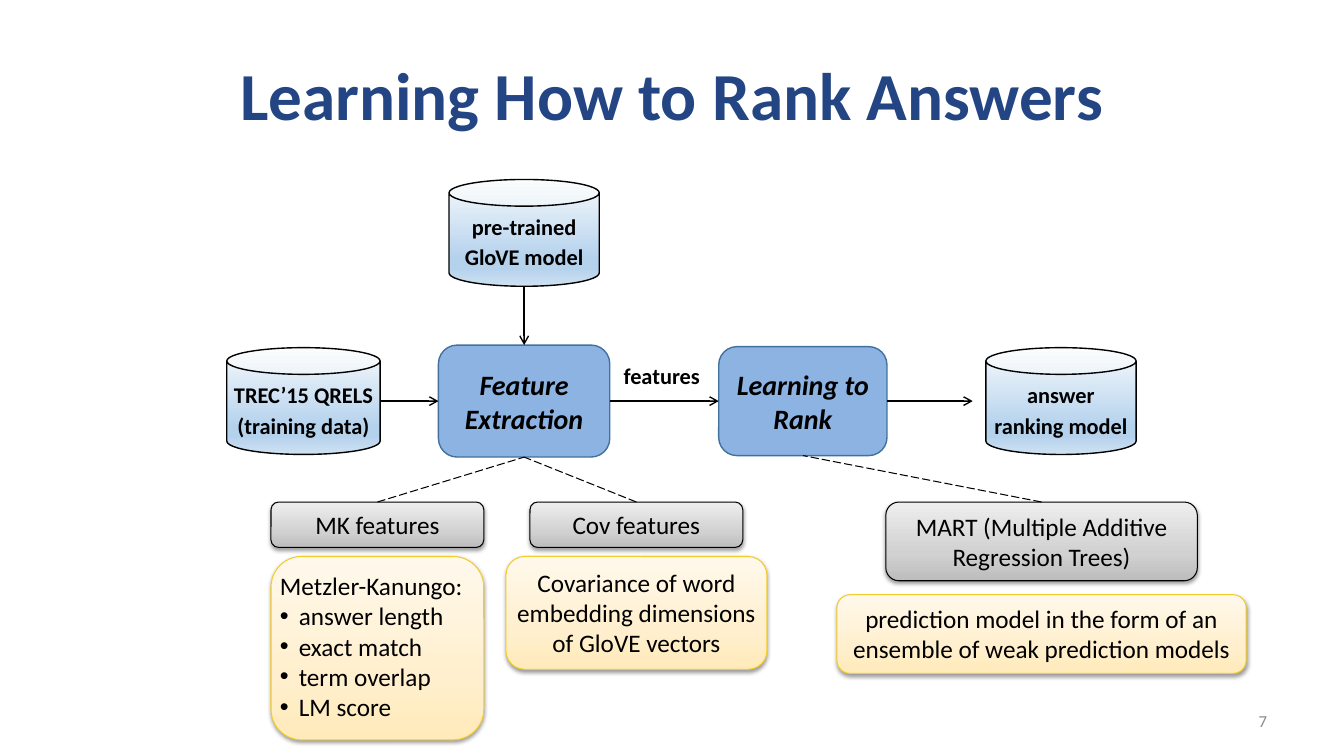
from lxml import etree
from pptx import Presentation
from pptx.dml.color import RGBColor
from pptx.enum.dml import MSO_LINE
from pptx.enum.shapes import MSO_CONNECTOR, MSO_SHAPE
from pptx.enum.text import MSO_ANCHOR as Anchor, MSO_AUTO_SIZE as AutoSize, PP_ALIGN as Align
from pptx.oxml.ns import qn
from pptx.util import Pt

# Content: the pipeline row holds (kind, left, width, height, text)
TITLE = "Learning How to Rank Answers"
PAGE = "7"
PIPELINE = {
    "training": ("store", 162, 109.5, 76.3, "TREC’15 QRELS (training data)"),
    "extraction": ("process", 313.2, 122.4, 80, "Feature Extraction"),
    "ranking": ("process", 513.4, 120.2, 77.8, "Learning to Rank"),
    "answer": ("store", 704.2, 107.3, 76.3, "answer\vranking model"),
}
GLOVE = ("pre-trained GloVE model", 128.2, 107.3, 76.3)  # text, top, width, height
LINK_LABEL = "features"
# process, header, centre, (width, height), note lines, note top, (width, height)
DETAILS = [
    ("extraction", "MK features", 269.6, (152, 32.4),
     ["Metzler-Kanungo:", "answer length", "exact match", "term overlap", "LM score"],
     397.5, (152, 131)),
    ("extraction", "Cov features", 454.6, (152, 32.4),
     ["Covariance of word embedding dimensions of GloVE vectors"], 397.5, (186.5, 80.6)),
    ("ranking", "MART (Multiple Additive Regression Trees)", 744, (222.5, 56.2),
     ["prediction model in the form of an ensemble of weak prediction models"],
     424.8, (292.3, 56.2)),
]
ROW_MIDDLE = 286.5
HEADER_TOP = 358.6
ARROW_END = 694.8
BULLET_INDENT = 13.5

# Theme: gradients are (angle, [(position, colour), ...])
THEME = {
    "font": "Calibri",
    "black": "000000",
    "store": {"fill": (90, [(0, "F7FAFD"), (74, "B5D2EC"), (83, "B5D2EC"), (100, "CEE1F2")]),
              "line": "000000", "width": 1},
    "process": {"fill": "8DB3E2", "line": "41719C", "width": 1},
    "header": {"fill": (270, [(0, "BDBDBD"), (35, "D1D1D1"), (100, "EEEEEE")]),
               "line": "000000", "width": 0.75, "shadow": True},
    "note": {"fill": (270, [(0, "FFEAB9"), (35, "FFEFCE"), (100, "FFF9EC")]),
             "line": "F4CB27", "width": 0.75, "shadow": True},
}
TEXT = {
    "title": {"size": 48, "bold": True, "color": "244583"},
    "store": {"size": 16, "bold": True, "inset": 0, "spacing": 1.15, "after": 10},
    "process": {"size": 20, "bold": True, "italic": True},
    "header": {"size": 18, "anchor": Anchor.TOP, "grow": True},
    "note": {"size": 18, "anchor": Anchor.TOP, "grow": True, "inset": 0},
    "page": {"size": 12, "color": "8C8C8C", "align": Align.RIGHT},
}

presentation = Presentation()
presentation.slide_width, presentation.slide_height = Pt(960), Pt(540)
slide = presentation.slides.add_slide(presentation.slide_layouts[6])


def set_all(target, values):
    for name, value in values.items():
        setattr(target, name, value)


def add_xml(parent, tag, **attributes):
    return etree.SubElement(parent, qn(tag), {key: str(value) for key, value in attributes.items()})


def write(shape, lines, style_name):
    """Fill a shape with paragraphs; lines after the first are bullets."""
    style = TEXT[style_name]
    inset = Pt(style.get("inset", 7.2))
    frame = shape.text_frame
    set_all(frame, {
        "word_wrap": True,
        "auto_size": AutoSize.SHAPE_TO_FIT_TEXT if style.get("grow") else AutoSize.NONE,
        "vertical_anchor": style.get("anchor", Anchor.MIDDLE),
        "margin_left": inset, "margin_right": inset,
        "margin_top": Pt(3.6), "margin_bottom": Pt(3.6),
    })
    align = Align.LEFT if len(lines) > 1 else style.get("align", Align.CENTER)
    for index, line in enumerate(lines):
        paragraph = frame.add_paragraph() if index else frame.paragraphs[0]
        paragraph.text = line
        set_all(paragraph, {"alignment": align, "line_spacing": style.get("spacing", 1.0),
                            "space_after": Pt(style.get("after", 0))})
        if index:
            properties = paragraph._p.get_or_add_pPr()
            properties.set("marL", str(Pt(BULLET_INDENT)))
            properties.set("indent", str(-Pt(BULLET_INDENT)))
            add_xml(properties, "a:buFont", typeface="Arial")
            add_xml(properties, "a:buChar", char="•")
        for run in paragraph.runs:
            set_all(run.font, {"name": THEME["font"], "size": Pt(style["size"]),
                               "bold": style.get("bold", False),
                               "italic": style.get("italic", False)})
            run.font.color.rgb = RGBColor.from_string(style.get("color", THEME["black"]))


def add_label(text, left, top, width, height, style_name):
    box = slide.shapes.add_textbox(Pt(left), Pt(top), Pt(width), Pt(height))
    write(box, [text], style_name)


def add_box(kind, lines, left, top, width, height):
    look = THEME[kind]
    preset = MSO_SHAPE.CAN if kind == "store" else MSO_SHAPE.ROUNDED_RECTANGLE
    shape = slide.shapes.add_shape(preset, Pt(left), Pt(top), Pt(width), Pt(height))
    shape.shadow.inherit = False
    shape.line.color.rgb = RGBColor.from_string(look["line"])
    shape.line.width = Pt(look["width"])
    properties = shape._element.spPr
    if isinstance(look["fill"], str):
        shape.fill.solid()
        shape.fill.fore_color.rgb = RGBColor.from_string(look["fill"])
    else:
        angle, stops = look["fill"]
        shape.fill.gradient()
        shape.fill.gradient_angle = 360 - angle
        stop_list = properties.find(qn("a:gradFill")).find(qn("a:gsLst"))
        for old_stop in list(stop_list):
            stop_list.remove(old_stop)
        for position, color in stops:
            add_xml(add_xml(stop_list, "a:gs", pos=position * 1000), "a:srgbClr", val=color)
    if look.get("shadow"):
        shadow = add_xml(properties.find(qn("a:effectLst")), "a:outerShdw", blurRad=Pt(3.1),
                         dist=Pt(1.6), dir=90 * 60000, rotWithShape=0)
        add_xml(add_xml(shadow, "a:srgbClr", val=THEME["black"]), "a:alpha", val=38000)
    write(shape, lines, kind)
    return shape


def add_link(start, end, begin=None, finish=None, dashed=False):
    """Draw a line; begin and finish are optional (shape, side) joints."""
    link = slide.shapes.add_connector(MSO_CONNECTOR.STRAIGHT, *map(Pt, (*start, *end)))
    link.line.color.rgb = RGBColor.from_string(THEME["black"])
    link.line.width = Pt(0.75 if dashed else 1)
    if dashed:
        link.line.dash_style = MSO_LINE.LONG_DASH
    else:
        add_xml(link.line._get_or_add_ln(), "a:tailEnd", type="arrow")
    add_xml(link._element.spPr, "a:effectLst")
    if begin:
        link.begin_connect(*begin)
    if finish:
        link.end_connect(*finish)


# Title
add_label(TITLE, 48, 21.6, 864, 90, "title")

# Pipeline row and the model above it
boxes = {}
for name, (kind, left, width, height, text) in PIPELINE.items():
    boxes[name] = add_box(kind, [text], left, ROW_MIDDLE - height / 2, width, height)
extraction, ranking = boxes["extraction"], boxes["ranking"]
extraction_middle = extraction.left.pt + extraction.width.pt / 2
text, top, width, height = GLOVE
add_box("store", [text], extraction_middle - width / 2, top, width, height)
add_label(LINK_LABEL, 426.2, 247.7, 93, 38.9, "store")

# Arrows
training_right = PIPELINE["training"][1] + PIPELINE["training"][2]
ranking_right = ranking.left.pt + ranking.width.pt
add_link((extraction_middle, top + height), (extraction_middle, extraction.top.pt),
         finish=(extraction, 0))
add_link((training_right, ROW_MIDDLE), (extraction.left.pt, ROW_MIDDLE), finish=(extraction, 1))
add_link((extraction_middle, ROW_MIDDLE), (ranking.left.pt, ROW_MIDDLE),
         begin=(extraction, 3), finish=(ranking, 1))
add_link((ranking_right, ROW_MIDDLE), (ARROW_END, ROW_MIDDLE), begin=(ranking, 3))

# Details below each process
for process, heading, middle, header_size, note, note_top, note_size in DETAILS:
    header = add_box("header", [heading], middle - header_size[0] / 2, HEADER_TOP, *header_size)
    add_box("note", note, middle - note_size[0] / 2, note_top, *note_size)
    add_link((middle, HEADER_TOP), (middle, ROW_MIDDLE),
             begin=(header, 0), finish=(boxes[process], 2), dashed=True)

# Page number
add_label(PAGE, 688.3, 500.4, 224, 28.8, "page")

presentation.save("out.pptx")
